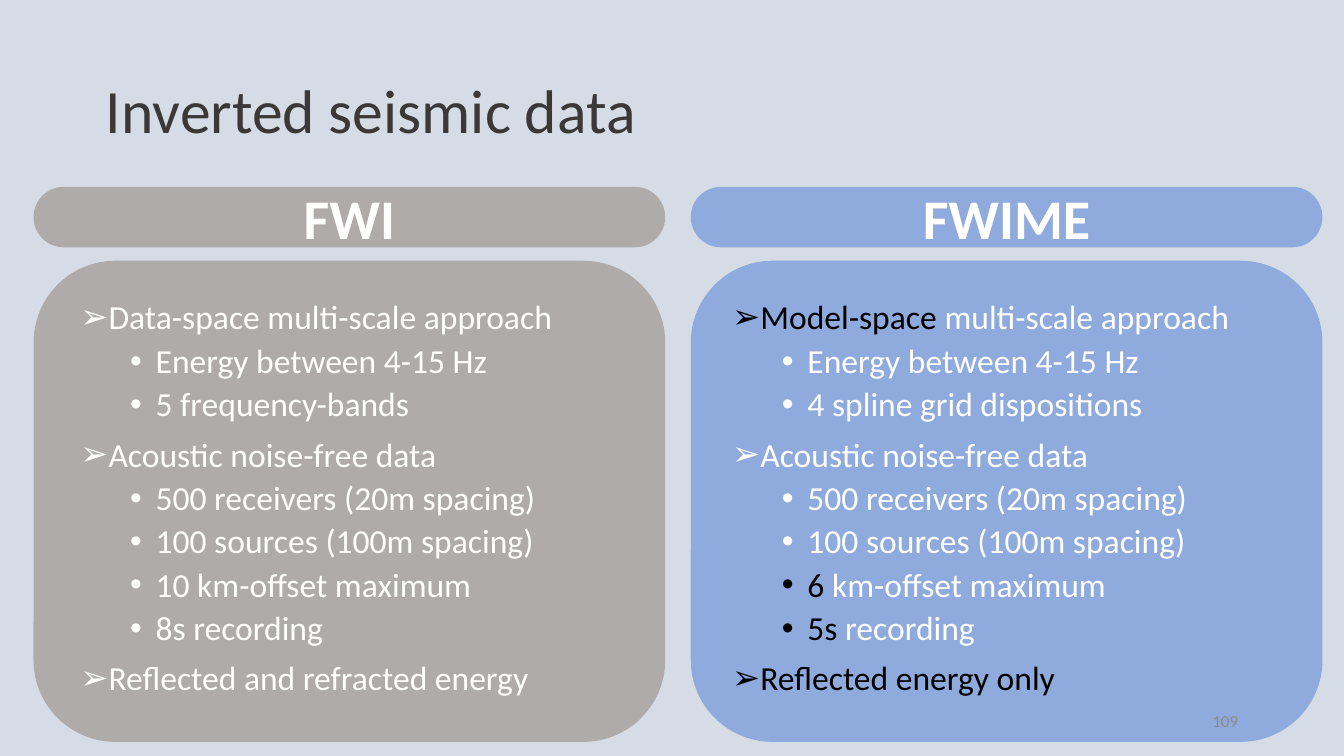
from lxml.etree import SubElement
from pptx import Presentation
from pptx.dml.color import RGBColor
from pptx.enum.shapes import MSO_SHAPE as Shape
from pptx.enum.text import MSO_ANCHOR as Anchor, PP_ALIGN as Align
from pptx.oxml.ns import qn
from pptx.util import Inches, Pt

COLORS = {"back": "D6DCE5", "gray": "AFABAB", "blue": "8FAADC", "title": "3B3838",
          "white": "FFFFFF", "black": "000000", "page": "8B8B8B"}
TITLE = "Inverted seismic data"
PAGE = "109"

# Each item: level, part that differs (black), rest (white)
PANELS = [
    {"head": "FWI", "fill": "gray", "left": 0.25, "text": 0.5, "items": [
        (0, "", "Data-space multi-scale approach"),
        (1, "", "Energy between 4-15 Hz"),
        (1, "", "5 frequency-bands"),
        (0, "", "Acoustic noise-free data"),
        (1, "", "500 receivers (20m spacing)"),
        (1, "", "100 sources (100m spacing)"),
        (1, "", "10 km-offset maximum"),
        (1, "", "8s recording"),
        (0, "", "Reflected and refracted energy")]},
    {"head": "FWIME", "fill": "blue", "left": 5.14, "text": 5.35, "items": [
        (0, "Model-space", " multi-scale approach"),
        (1, "", "Energy between 4-15 Hz"),
        (1, "", "4 spline grid dispositions"),
        (0, "", "Acoustic noise-free data"),
        (1, "", "500 receivers (20m spacing)"),
        (1, "", "100 sources (100m spacing)"),
        (1, "6", " km-offset maximum"),
        (1, "5s", " recording"),
        (0, "Reflected energy only", "")]},
]
LEVELS = [{"mark": "➢", "indent": 0.19, "before": 7.5},
          {"mark": "•", "indent": 0.56, "before": 3.8}]
HANG = 0.19
WIDE = 4.7
SLIDE_W = 10
SLIDE_H = SLIDE_W * 9 / 16


def rgb(name):
    return RGBColor.from_string(COLORS[name])


def add_run(para, text, size, color, bold=False):
    run = para.add_run()
    run.text = text
    for key, value in {"name": "Calibri", "size": Pt(size), "bold": bold}.items():
        setattr(run.font, key, value)
    run.font.color.rgb = rgb(color)


def add_pill(slide, box, fill, round_by):
    pill = slide.shapes.add_shape(Shape.ROUNDED_RECTANGLE, *map(Inches, box))
    pill.adjustments[0] = round_by
    pill.shadow.inherit = False
    pill.fill.solid()
    pill.fill.fore_color.rgb = rgb(fill)
    pill.line.fill.background()
    return pill


def add_box(slide, box, anchor):
    frame = slide.shapes.add_textbox(*map(Inches, box)).text_frame
    frame.word_wrap = True
    frame.vertical_anchor = anchor
    return frame


def set_bullet(para, level):
    props = para._p.get_or_add_pPr()
    props.set("marL", str(Inches(level["indent"])))
    props.set("indent", str(-Inches(HANG)))
    SubElement(props, qn("a:buFont"), typeface="Arial")
    SubElement(props, qn("a:buChar"), char=level["mark"])


def add_list(frame, items):
    for i, (depth, dark, light) in enumerate(items):
        para = frame.add_paragraph() if i else frame.paragraphs[0]
        level = LEVELS[depth]
        set_bullet(para, level)
        para.level = depth
        para.line_spacing = 0.9
        if i:
            para.space_before = Pt(level["before"])
        for text, color in ((dark, "black"), (light, "white")):
            if text:
                add_run(para, text, 18, color)


def add_panel(slide, panel):
    left, fill = panel["left"], panel["fill"]
    add_pill(slide, (left, 1.94, WIDE, 3.58), fill, 0.17)
    head = add_pill(slide, (left, 1.39, WIDE, 0.45), fill, 0.5).text_frame
    head.vertical_anchor = Anchor.MIDDLE
    para = head.paragraphs[0]
    para.alignment = Align.CENTER
    add_run(para, panel["head"], 30, "white", True)
    add_list(add_box(slide, (panel["text"], 2.19, 4.2, 3.57), Anchor.TOP), panel["items"])


def main():
    deck = Presentation()
    deck.slide_width, deck.slide_height = Inches(SLIDE_W), Inches(SLIDE_H)
    slide = deck.slides.add_slide(deck.slide_layouts[6])
    slide.background.fill.solid()
    slide.background.fill.fore_color.rgb = rgb("back")

    title = add_box(slide, (0.69, 0.3, 8.62, 1.09), Anchor.MIDDLE).paragraphs[0]
    title.line_spacing = 0.9
    add_run(title, TITLE, 33, "title")
    for panel in PANELS:
        add_panel(slide, panel)
    page = add_box(slide, (7.06, 5.21, 2.25, 0.3), Anchor.MIDDLE).paragraphs[0]
    page.alignment = Align.RIGHT
    add_run(page, PAGE, 9, "page")
    deck.save("out.pptx")


if __name__ == "__main__":
    main()
